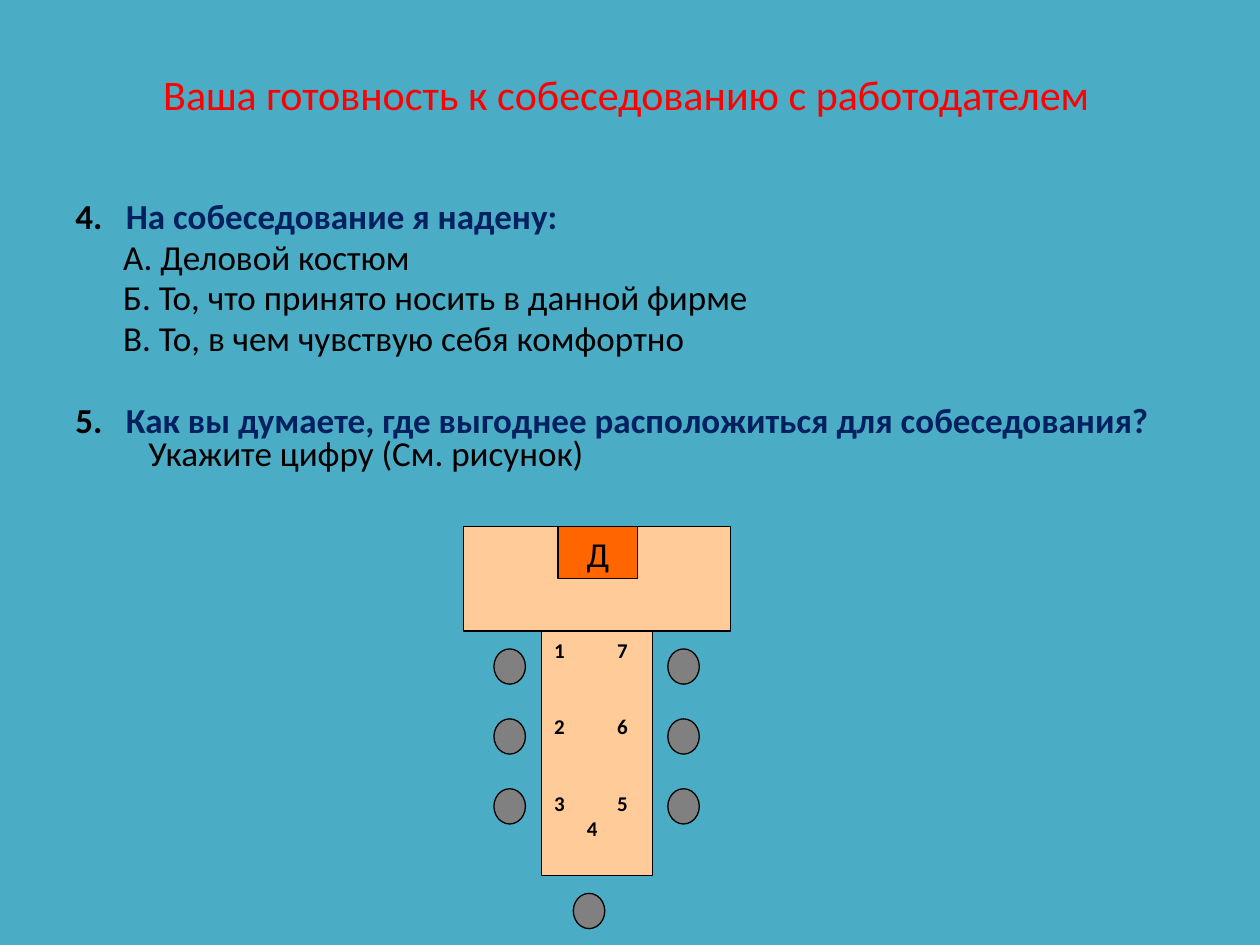
from dataclasses import dataclass
from typing import NamedTuple

from lxml import etree
from pptx import Presentation
from pptx.dml import color
from pptx.enum import shapes, text
from pptx.oxml import ns
from pptx.util import Inches, Pt


@dataclass(frozen=True)
class Theme:
    font: str = "Calibri"
    back: str = "4BACC6"
    head: str = "FF0000"
    ask: str = "002060"
    ink: str = "000000"
    wood: str = "FFCC99"
    seat: str = "808080"
    chief: str = "FF6600"
    big: float = 24
    body: float = 20
    small: float = 12
    edge: float = 0.75


class Box(NamedTuple):
    left: float
    top: float
    width: float
    height: float

    def emu(self):
        return [Inches(v) for v in self]


class Run(NamedTuple):
    words: str
    tint: str
    bold: bool = False


class Line(NamedTuple):
    runs: list[Run]
    left: float = 0
    hang: float = 0
    before: float = 0
    pitch: float = 1.0
    tab: float = 0
    align: text.PP_ALIGN = text.PP_ALIGN.LEFT


THEME = Theme()


def rgb(code: str) -> color.RGBColor:
    return color.RGBColor.from_string(code)


def apply(item, values: dict) -> None:
    for name, value in values.items():
        setattr(item, name, value)


def write(frame, lines: list[Line], size: float) -> None:
    frame.word_wrap = True
    for i, line in enumerate(lines):
        para = frame.add_paragraph() if i else frame.paragraphs[0]
        apply(para, {"alignment": line.align, "line_spacing": line.pitch,
                     "space_before": Pt(line.before)})
        props = para._p.get_or_add_pPr()
        props.set("marL", str(Inches(line.left)))
        props.set("indent", str(Inches(-line.hang)))
        if line.tab:
            tabs = etree.SubElement(props, ns.qn("a:tabLst"))
            etree.SubElement(tabs, ns.qn("a:tab"),
                             pos=str(Inches(line.tab)), algn="l")
        for part in line.runs:
            run = para.add_run()
            run.text = part.words
            apply(run.font, {"name": THEME.font, "size": Pt(size),
                             "bold": part.bold})
            run.font.color.rgb = rgb(part.tint)


def draw(group, kind: shapes.MSO_SHAPE, box: Box, fill: str):
    shape = group.shapes.add_shape(kind, *box.emu())
    shape.shadow.inherit = False
    shape.fill.solid()
    shape.fill.fore_color.rgb = rgb(fill)
    shape.line.color.rgb = rgb(THEME.ink)
    shape.line.width = Pt(THEME.edge)
    shape.text_frame.vertical_anchor = text.MSO_ANCHOR.TOP
    return shape


def title(slide) -> None:
    head = slide.shapes.title
    box = Box(0.47, 0.31, 9, 0.86)
    apply(head, dict(zip(box._fields, box.emu())))
    head.text_frame.vertical_anchor = text.MSO_ANCHOR.MIDDLE
    words = "Ваша готовность к собеседованию с работодателем"
    write(head.text_frame,
          [Line([Run(words, THEME.head)], align=text.PP_ALIGN.CENTER)],
          THEME.big)


def ask(number: int, words: str, before: float) -> Line:
    runs = [Run(f"{number}.\t", THEME.ink, True), Run(words, THEME.ask, True)]
    return Line(runs, 0.4, 0.4, before, 0.8)


def note(words: str, left: float, before: float) -> Line:
    return Line([Run(words, THEME.ink)], left, 0, before, 0.8)


def body(slide) -> None:
    picks = ["А. Деловой костюм",
             "Б. То, что принято носить в данной фирме",
             "В. То, в чем чувствую себя комфортно"]
    lines = [
        ask(4, "На собеседование я надену:", 4),
        *[note(pick, 0.38, 4) for pick in picks],
        ask(5, "Как вы думаете, где выгоднее расположиться для собеседования?",
            27.5),
        note("Укажите цифру (См. рисунок)", 0.58, 0),
    ]
    area = slide.shapes.add_textbox(*Box(0.5, 1.56, 9.5, 5.94).emu())
    write(area.text_frame, lines, THEME.body)


def table(slide) -> None:
    group = slide.shapes.add_group_shape()
    rect, oval = shapes.MSO_SHAPE.RECTANGLE, shapes.MSO_SHAPE.OVAL
    stem = draw(group, rect, Box(4.3, 5.01, 0.88, 1.94), THEME.wood)
    marks = [Line([Run(f"{n}\t{8 - n}", THEME.ink, True)], tab=0.46,
                  before=29.3 if n > 1 else 0) for n in (1, 2, 3)]
    marks.append(Line([Run("4", THEME.ink, True)], left=0.26))
    write(stem.text_frame, marks, THEME.small)

    spots = [(x, 5.15 + 0.555 * row) for x in (3.92, 5.3) for row in range(3)]
    for x, y in [*spots, (4.55, 7.09)]:
        draw(group, oval, Box(x, y, 0.25, 0.28), THEME.seat)

    draw(group, rect, Box(3.68, 4.18, 2.12, 0.83), THEME.wood)
    chief = draw(group, rect, Box(4.43, 4.18, 0.63, 0.41), THEME.chief)
    write(chief.text_frame,
          [Line([Run("Д", THEME.ink)], align=text.PP_ALIGN.CENTER)],
          THEME.body)


def main() -> None:
    deck = Presentation()
    apply(deck, {"slide_width": Inches(10), "slide_height": Inches(7.5)})
    slide = deck.slides.add_slide(deck.slide_layouts[5])
    slide.background.fill.solid()
    slide.background.fill.fore_color.rgb = rgb(THEME.back)
    title(slide)
    body(slide)
    table(slide)
    deck.save("out.pptx")


if __name__ == "__main__":
    main()
